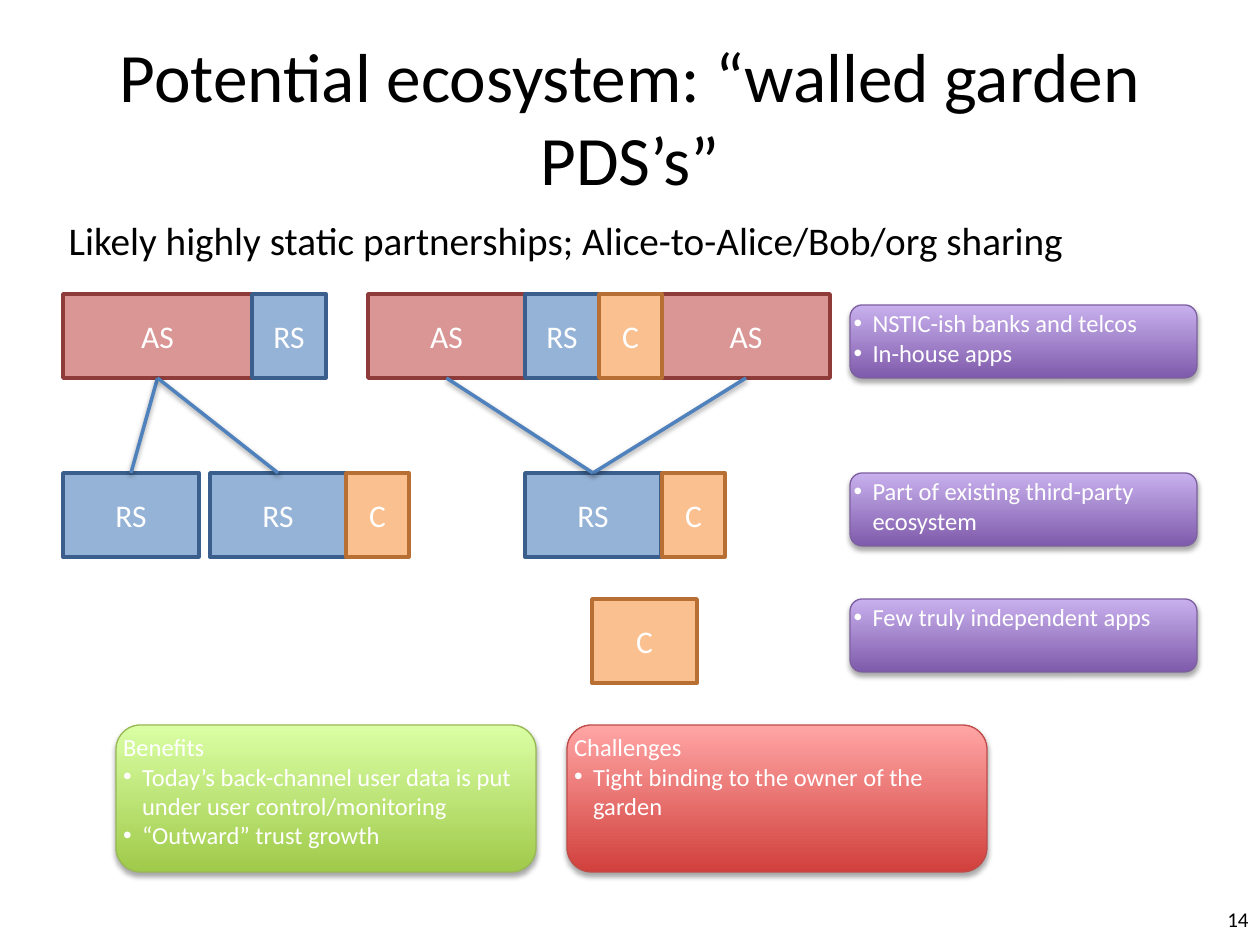
from dataclasses import dataclass

from lxml.etree import SubElement as Sub
from pptx import Presentation as Deck
from pptx.dml.color import RGBColor as Rgb
from pptx.enum.shapes import MSO_CONNECTOR as Conn, MSO_SHAPE as Kind
from pptx.enum.text import MSO_ANCHOR as Anchor, MSO_AUTO_SIZE as Fit, PP_ALIGN as Align
from pptx.oxml.ns import qn
from pptx.util import Emu, Pt

SCALE = 914400 / 126


def px(n):
    return Emu(round(n * SCALE))


@dataclass(frozen=True)
class Theme:
    font: str = "Calibri"
    ink: str = "000000"
    light: str = "FFFFFF"
    link: str = "4F81BD"
    title: float = 39.6
    lead: float = 22.4
    label: int = 18
    note: int = 14
    page: int = 12
    edge: float = 2
    rim: float = 0.75
    indent: int = 19


BOXES = {"AS": ("D99694", "8E3B39"), "RS": ("95B3D7", "3A5F8C"), "C": ("FAC090", "B76F34")}
PURPLE = ("7F5BAB", "C8B0ED", "7D60A0")
GREEN = ("A0CA4A", "DAFFA5", "98B955")
RED = ("D1403C", "FFA6A5", "BF4C48")


class Page:
    def __init__(self, slide, theme):
        self.slide = slide
        self.theme = theme

    def place(self, shape, x, y, w, h):
        shape.left, shape.top, shape.width, shape.height = map(px, (x, y, w, h))

    def style(self, para, size, color, align=Align.LEFT):
        para.alignment = align
        para.space_before = Pt(0)
        font = para.font
        font.name, font.size = self.theme.font, Pt(size)
        font.color.rgb = Rgb.from_string(color)

    def bullet(self, para):
        props = para._p.get_or_add_pPr()
        step = px(self.theme.indent)
        props.set("marL", str(step))
        props.set("indent", str(-step))
        Sub(props, qn("a:buFont"), typeface="Arial")
        Sub(props, qn("a:buChar"), char="•")

    def shade(self, effects, alpha, dist):
        cast = Sub(effects, qn("a:outerShdw"), blurRad=str(Pt(3.1)), dist=str(Pt(dist)),
                   dir="5400000", rotWithShape="0")
        color = Sub(cast, qn("a:srgbClr"), val=self.theme.ink)
        Sub(color, qn("a:alpha"), val=str(alpha * 1000))

    def title(self, text, *spot):
        shape = self.slide.shapes.title
        self.place(shape, *spot)
        frame = shape.text_frame
        frame.text = text
        frame.auto_size = Fit.NONE
        frame.vertical_anchor = Anchor.MIDDLE
        self.style(frame.paragraphs[0], self.theme.title, self.theme.ink, Align.CENTER)

    def lead(self, text, *spot):
        shape = self.slide.placeholders[1]
        self.place(shape, *spot)
        frame = shape.text_frame
        frame.text = text
        frame.auto_size = Fit.NONE
        para = frame.paragraphs[0]
        props = para._p.get_or_add_pPr()
        props.set("marL", "0")
        props.set("indent", "0")
        Sub(props, qn("a:buNone"))
        self.style(para, self.theme.lead, self.theme.ink)

    def number(self, text, *spot):
        frame = self.slide.shapes.add_textbox(*map(px, spot)).text_frame
        frame.word_wrap = True
        frame.text = text
        self.style(frame.paragraphs[0], self.theme.page, self.theme.ink, Align.RIGHT)

    def box(self, text, x, y, w, h=84):
        fill, edge = BOXES[text]
        shape = self.slide.shapes.add_shape(Kind.RECTANGLE, *map(px, (x, y, w, h)))
        shape.shadow.inherit = False
        shape.fill.solid()
        shape.fill.fore_color.rgb = Rgb.from_string(fill)
        shape.line.color.rgb = Rgb.from_string(edge)
        shape.line.width = Pt(self.theme.edge)
        frame = shape.text_frame
        frame.text = text
        frame.vertical_anchor = Anchor.MIDDLE
        self.style(frame.paragraphs[0], self.theme.label, self.theme.light, Align.CENTER)
        return shape

    def join(self, low, high):
        line = self.slide.shapes.add_connector(Conn.STRAIGHT, 0, 0, 0, 0)
        line.begin_connect(low, 0)
        line.end_connect(high, 2)
        line.line.color.rgb = Rgb.from_string(self.theme.link)
        line.line.width = Pt(self.theme.edge)
        self.shade(Sub(line._element.spPr, qn("a:effectLst")), 38, 1.6)

    def panel(self, tint, items, x, y, w, h, head=None):
        base, top, rim = tint
        shape = self.slide.shapes.add_shape(Kind.ROUNDED_RECTANGLE, *map(px, (x, y, w, h)))
        shape.fill.gradient()
        shape.fill.gradient_angle = 90
        for stop, color in zip(shape.fill.gradient_stops, (base, top)):
            stop.color.rgb = Rgb.from_string(color)
        shape.line.color.rgb = Rgb.from_string(rim)
        shape.line.width = Pt(self.theme.rim)
        shape.shadow.inherit = False
        self.shade(shape._element.spPr.find(qn("a:effectLst")), 35, 1.8)
        frame = shape.text_frame
        frame.margin_left = frame.margin_right = frame.margin_top = frame.margin_bottom = 0
        frame.vertical_anchor = Anchor.TOP
        frame.word_wrap = True
        frame.text = "\n".join([head, *items] if head else items)
        for para in frame.paragraphs:
            if para.text != head:
                self.bullet(para)
            self.style(para, self.theme.note, self.theme.light)


def main():
    deck = Deck()
    deck.slide_width, deck.slide_height = px(1260), px(945)
    page = Page(deck.slides.add_slide(deck.slide_layouts[1]), Theme())

    page.title("Potential ecosystem: “walled garden PDS’s”", 63, 38, 1134, 157)
    page.lead("Likely highly static partnerships; Alice-to-Alice/Bob/org sharing", 56, 210, 1071, 53)
    page.number("14", 1212, 900, 49, 50)

    top, mid, low = 294, 473, 599
    left, inner, right = [page.box("AS", x, top, w) for x, w in ((63, 189), (368, 157), (662, 168))]
    first, second, third = [page.box("RS", x, mid, 136) for x in (63, 210, 525)]
    for x in (252, 525):
        page.box("RS", x, top, 74)
    for x, y in ((599, top), (346, mid), (662, mid)):
        page.box("C", x, y, 63)
    page.box("C", 592, low, 105)

    for start, end in ((first, left), (second, left), (third, right), (third, inner)):
        page.join(start, end)

    notes = (
        (305, ["NSTIC-ish banks and telcos", "In-house apps"]),
        (mid, ["Part of existing third-party ecosystem"]),
        (low, ["Few truly independent apps"]),
    )
    for y, items in notes:
        page.panel(PURPLE, items, 850, y, 347, 73)

    gains = ["Today’s back-channel user data is put under user control/monitoring",
             "“Outward” trust growth"]
    page.panel(GREEN, gains, 116, 725, 420, 147, "Benefits")
    page.panel(RED, ["Tight binding to the owner of the garden"], 567, 725, 420, 147, "Challenges")

    deck.save("out.pptx")


if __name__ == "__main__":
    main()
